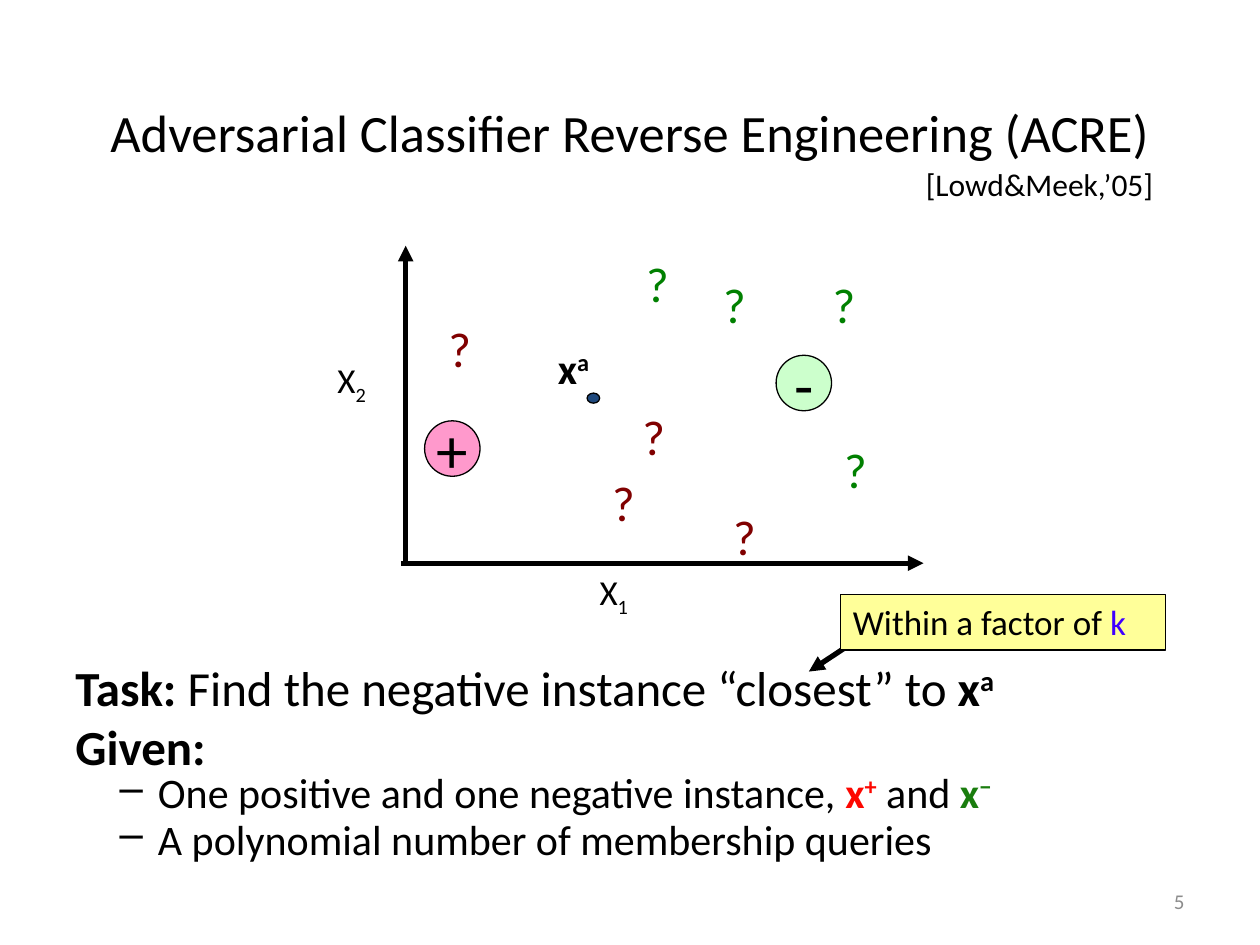
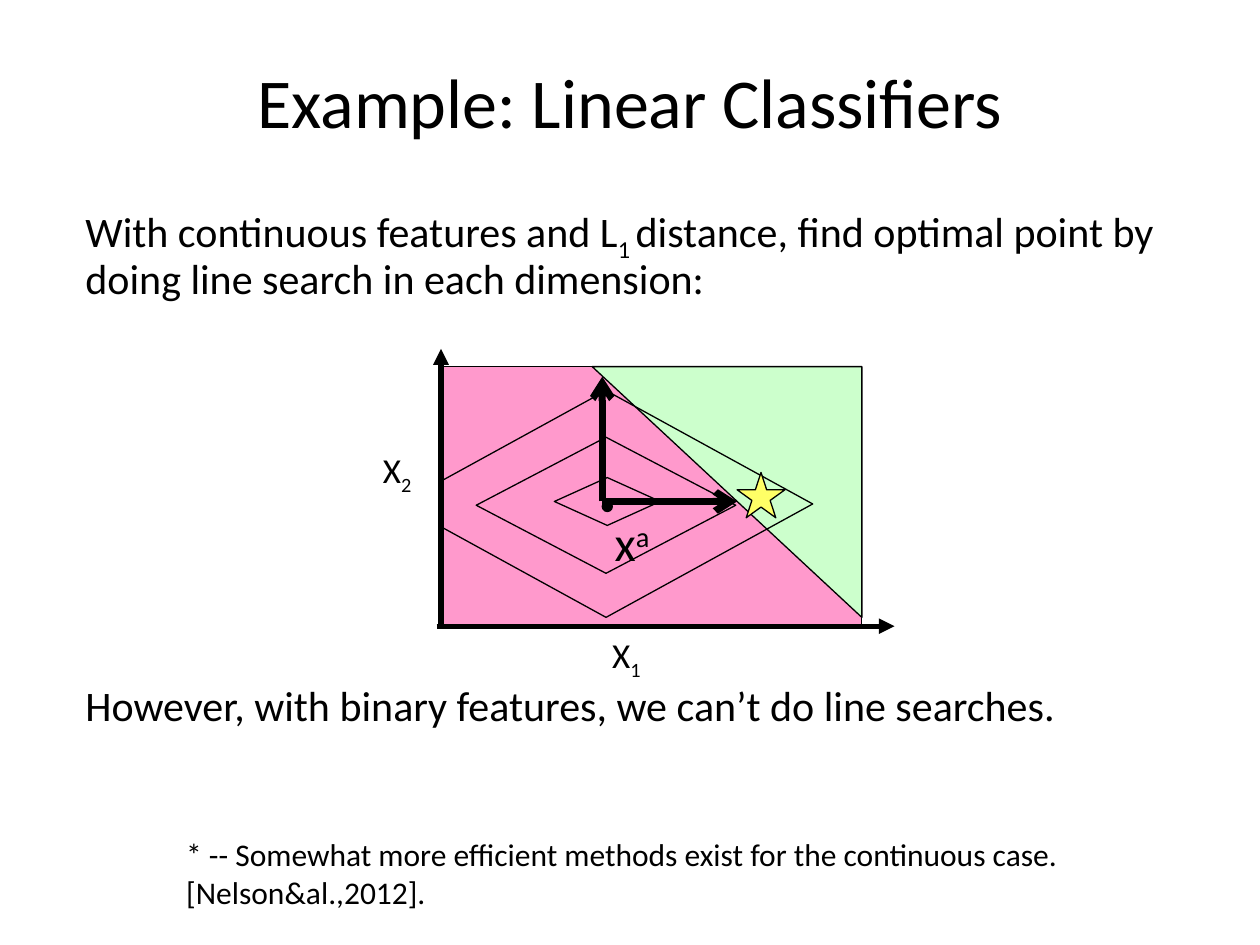
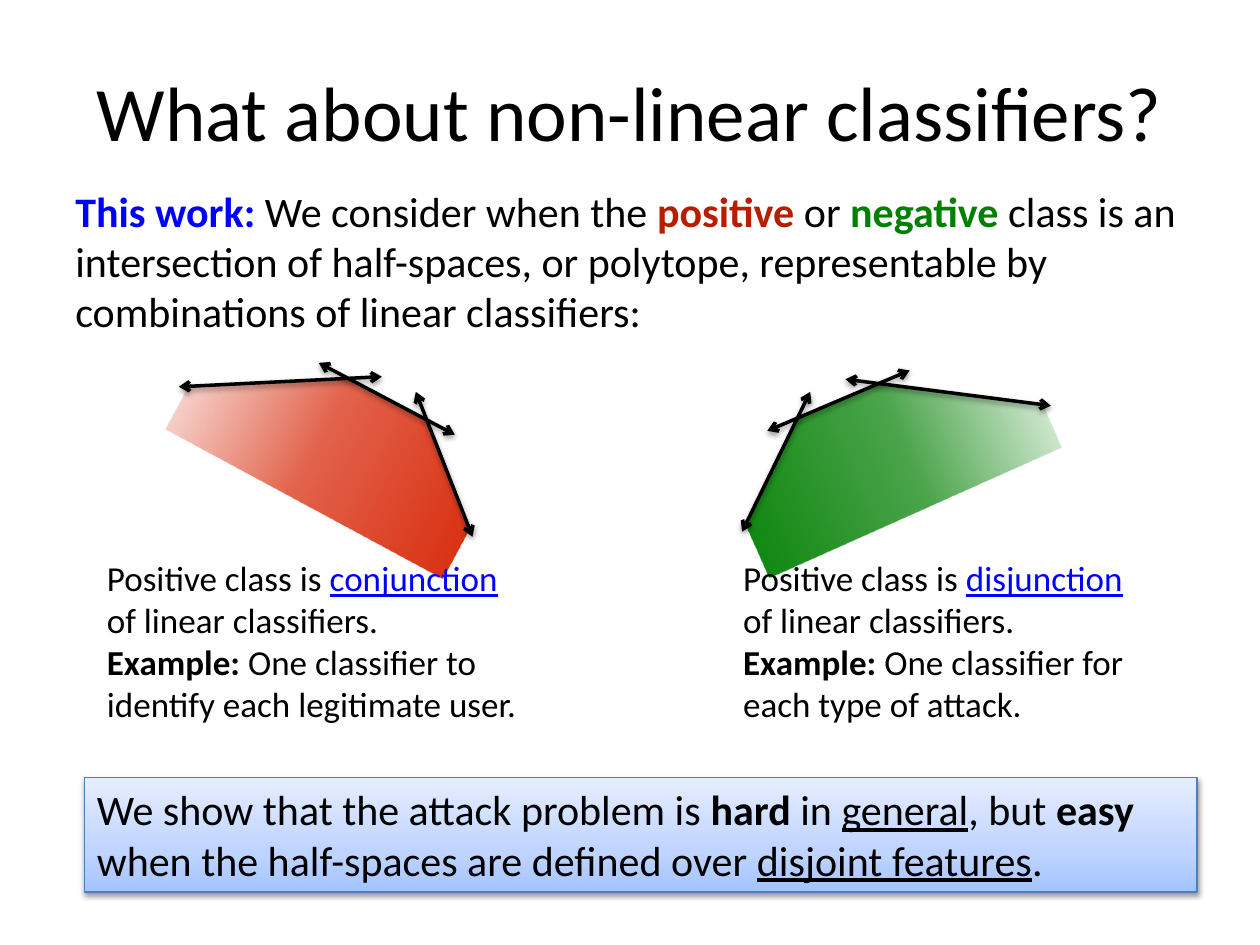
from lxml.etree import SubElement
from pptx import Presentation
from pptx.dml.color import RGBColor
from pptx.enum.shapes import MSO_CONNECTOR, MSO_SHAPE as Shape
from pptx.enum.text import MSO_ANCHOR as Anchor, PP_ALIGN as Align
from pptx.oxml.ns import qn
from pptx.util import Inches, Pt

# Shared style; the grid has 100 columns and 75 rows
COLUMNS, ROWS = 100, 75
FONT = "Calibri"
BLACK = RGBColor(0x00, 0x00, 0x00)
WHITE = RGBColor(0xFF, 0xFF, 0xFF)
GREY = RGBColor(0x8C, 0x8C, 0x8C)
GREEN = RGBColor(0x00, 0x80, 0x00)
MAROON = RGBColor(0x80, 0x00, 0x00)
RED = RGBColor(0xD7, 0x23, 0x02)
BRICK = RGBColor(0xB7, 0x1D, 0x00)
BRIGHT_RED = RGBColor(0xFD, 0x07, 0x00)
LEAF = RGBColor(0x1A, 0x7D, 0x0E)
BLUE = RGBColor(0x00, 0x00, 0xFF)
VIOLET = RGBColor(0x3F, 0x00, 0xFF)
NAVY = RGBColor(0x1F, 0x49, 0x7D)
STEEL = RGBColor(0x4B, 0x7E, 0xBC)
PINK = RGBColor(0xFF, 0x99, 0xCC)
MINT = RGBColor(0xCC, 0xFF, 0xCC)
CREAM = RGBColor(0xFF, 0xFF, 0x99)
YELLOW = RGBColor(0xFF, 0xFF, 0x66)
SKY = [(0, RGBColor(0xA4, 0xC4, 0xFF), 100),
       (35, RGBColor(0xBF, 0xD4, 0xFF), 100),
       (100, RGBColor(0xE6, 0xEE, 0xFF), 100)]

BOLD = dict(bold=True)
UNDERLINE = dict(underline=True)
TERM = dict(underline=True, color=BLUE)
SUB = dict(baseline=-25)
SUPER = dict(baseline=30)


def write(frame, paragraphs, size=20, color=BLACK, align=Align.LEFT,
          anchor=Anchor.TOP, wrap=True, spacing=None, gap=0, bullet=None):
    """Each paragraph is a list of spans: a string or (string, format)."""
    frame.word_wrap = wrap
    frame.vertical_anchor = anchor
    for index, spans in enumerate(paragraphs):
        para = frame.paragraphs[0] if index == 0 else frame.add_paragraph()
        para.alignment = align
        if spacing:
            para.line_spacing = spacing
        if index and gap:
            para.space_before = Pt(gap)
        if bullet:
            properties = para._p.get_or_add_pPr()
            properties.set("marL", str(Inches(0.5)))
            properties.set("indent", str(Inches(-0.23)))
            SubElement(properties, qn("a:buChar"), char=bullet)
        for item in spans:
            if item == "\n":
                para.add_line_break()
                continue
            text, look = (item, {}) if isinstance(item, str) else item
            span = para.add_run()
            span.text = text
            font = span.font
            font.name, font.size = FONT, Pt(size)
            font.bold = look.get("bold", False)
            font.underline = look.get("underline", False)
            font.color.rgb = look.get("color", color)
            if "baseline" in look:
                span._r.get_or_add_rPr().set("baseline", str(look["baseline"] * 1000))


def add_color(parent, color, alpha):
    tone = SubElement(parent, qn("a:srgbClr"), val=str(color))
    if alpha < 100:
        SubElement(tone, qn("a:alpha"), val=str(alpha * 1000))


def set_effects(element, shadow):
    properties = element.spPr
    effects = properties.find(qn("a:effectLst"))
    if effects is None:
        effects = SubElement(properties, qn("a:effectLst"))
    if shadow:
        outer = SubElement(effects, qn("a:outerShdw"), blurRad="40000", dist="20000",
                           dir="5400000", rotWithShape="0")
        add_color(outer, BLACK, 38)


class Canvas:
    def __init__(self):
        self.deck = Presentation()
        self.deck.slide_width, self.deck.slide_height = Inches(10), Inches(7.5)
        self.page = None

    def x(self, columns):
        return round(self.deck.slide_width * columns / COLUMNS)

    def y(self, rows):
        return round(self.deck.slide_height * rows / ROWS)

    def area(self, left, top, width, height):
        return self.x(left), self.y(top), self.x(width), self.y(height)

    def new_page(self):
        self.page = self.deck.slides.add_slide(self.deck.slide_layouts[6])

    def text(self, area, *paragraphs, **look):
        box = self.page.shapes.add_textbox(*self.area(*area))
        write(box.text_frame, paragraphs, **look)

    def title(self, text, top, size):
        self.text((5, top, 90, 12.5), [text], size=size, align=Align.CENTER,
                  anchor=Anchor.MIDDLE)

    def shape(self, kind, area, fill=None, line=BLACK, turn=0, shadow=False,
              gradient=None, angle=0):
        shape = self.page.shapes.add_shape(kind, *self.area(*area))
        shape.shadow.inherit = False
        shape.rotation = turn
        if gradient:
            shape.fill.gradient()
            shape.fill.gradient_angle = angle
            stops = shape._element.spPr.find(qn("a:gradFill")).find(qn("a:gsLst"))
            stops.clear()
            for place, color, alpha in gradient:
                add_color(SubElement(stops, qn("a:gs"), pos=str(place * 1000)), color, alpha)
        elif fill is None:
            shape.fill.background()
        else:
            shape.fill.solid()
            shape.fill.fore_color.rgb = fill
        if line is None:
            shape.line.fill.background()
        else:
            shape.line.color.rgb = line
            shape.line.width = Pt(0.75)
        set_effects(shape._element, shadow)
        return shape

    def arrow(self, start, end, width=3, head=None, tail="triangle", shadow=False):
        line = self.page.shapes.add_connector(
            MSO_CONNECTOR.STRAIGHT, self.x(start[0]), self.y(start[1]),
            self.x(end[0]), self.y(end[1]))
        line.line.color.rgb = BLACK
        line.line.width = Pt(width)
        outline = line.line._get_or_add_ln()
        for tag, kind in (("a:headEnd", head), ("a:tailEnd", tail)):
            if kind:
                SubElement(outline, qn(tag), type=kind)
        set_effects(line._element, shadow)

    def axes(self, left, base, top, right, labels):
        self.arrow((left, base), (left, top))
        self.arrow((left - 0.35, base), (right, base))
        for number, (column, row) in enumerate(labels, 1):
            self.text((column, row, 4.9, 4.3), ["X", (str(number), SUB)], wrap=False)

    def polytope(self, area, turn, color, angle, masks, edges):
        fade = [(0, color, 100), (54, color, 70), (100, color, 0)]
        self.shape(Shape.RECTANGLE, area, line=None, turn=turn, gradient=fade, angle=angle)
        for mask, mask_turn in masks:
            self.shape(Shape.RECTANGLE, mask, WHITE, None, mask_turn)
        for start, end in edges:
            self.arrow(start, end, width=2, head="arrow", tail="arrow", shadow=True)


def acre_page(canvas):
    canvas.new_page()
    canvas.arrow((69.2, 50), (64.2, 53.3))
    canvas.text((71.7, 69.5, 23.3, 4), ["5"], size=12, color=GREY,
                align=Align.RIGHT, anchor=Anchor.MIDDLE)
    canvas.title("Adversarial Classifier Reverse Engineering (ACRE)", 4.2, 30)
    canvas.text((5, 51.7, 90, 17),
                [("Task:", BOLD), " Find the negative instance “closest” to ",
                 ("x", BOLD), ("a", BOLD | SUPER)],
                [("Given:", BOLD)], size=28)

    # Feature space with unknown points and two known instances
    canvas.axes(32.2, 44.7, 19.5, 73.3, [(46.6, 44.8), (25.8, 28)])
    queries = {GREEN: [(56.4, 21.3), (65.1, 21.3), (50.3, 19.6), (66, 34.4)],
               MAROON: [(57.2, 39.7), (47.6, 37), (50, 31.8), (34.6, 24.8)]}
    for color, places in queries.items():
        for column, row in places:
            canvas.text((column, row, 4.2, 5.7), ["?"], size=28, color=color, wrap=False)
    for sign, column, row, fill in (("-", 61.6, 28.2, MINT), ("+", 33.7, 33.4, PINK)):
        instance = canvas.shape(Shape.OVAL, (column, row, 4.4, 4.4), fill)
        write(instance.text_frame, [[sign]], size=36, align=Align.CENTER,
              anchor=Anchor.MIDDLE, wrap=False)

    # What is given
    givens = [[" One positive and one negative instance, ",
               ("x", dict(bold=True, color=BRIGHT_RED)),
               ("+", dict(bold=True, color=BRIGHT_RED, baseline=30)), " and ",
               ("x", dict(bold=True, color=LEAF)),
               ("−", dict(bold=True, color=LEAF, baseline=30))],
              [" A polynomial number of membership queries"]]
    for row, given in zip((60.8, 64.5), givens):
        canvas.text((5.8, row, 79.2, 4.7), given, size=24, spacing=0.9, bullet="–")

    # Callout, citation and attack point
    callout = canvas.shape(Shape.RECTANGLE, (66.7, 47.2, 25.8, 4.4), CREAM)
    write(callout.text_frame, [["Within a factor of ", ("k", dict(color=VIOLET))]])
    canvas.text((72.5, 12.6, 20.4, 4), ["[Lowd&Meek,’05]"], size=18, wrap=False)
    canvas.text((43.3, 26.7, 4.7, 5), [("x", BOLD), ("a", BOLD | SUPER)],
                size=24, wrap=False)
    canvas.shape(Shape.OVAL, (46.6, 31.2, 1, 0.8), NAVY)


def linear_page(canvas):
    canvas.new_page()
    canvas.title("Example: Linear Classifiers", 1.7, 40)
    canvas.text((5.8, 15.9, 90, 24.1),
                ["With continuous features and L", ("1 ", SUB),
                 "distance, find optimal point by doing line search in each dimension:"],
                ["However, with binary features, we can’t do line searches."],
                size=24, spacing=0.9, gap=218)

    # Class regions and the distance contours
    canvas.shape(Shape.RECTANGLE, (34.8, 29.1, 33.6, 20.6), PINK)
    canvas.shape(Shape.RIGHT_TRIANGLE, (47, 29.1, 21.4, 19.9), MINT, turn=180)
    canvas.shape(Shape.DIAMOND, (31.7, 31, 32.8, 18))
    canvas.shape(Shape.RECTANGLE, (26.4, 30.7, 8.4, 19.1), WHITE, None)
    canvas.axes(35, 49.7, 27.7, 71, [(47.6, 49.8), (29.4, 35.1)])
    for contour in ((44, 37.9, 8.4, 3.8), (37.8, 34.7, 20.6, 10.8)):
        canvas.shape(Shape.DIAMOND, contour)

    # Line searches from the attack point
    canvas.text((47.8, 40.2, 5, 5.7), ["x", ("a", SUPER)], size=28, wrap=False)
    canvas.shape(Shape.OVAL, (47.8, 39.8, 0.8, 0.8), BLACK)
    for end in ((47.8, 29.9), (58.5, 39.8)):
        canvas.arrow((47.8, 39.8), end, width=4, tail="arrow")
    canvas.shape(Shape.STAR_5_POINT, (58.5, 37.5, 3.8, 3.6), YELLOW)
    canvas.text((13.8, 65.8, 72.4, 7.1),
                ["* -- Somewhat more efficient methods exist for the continuous case."],
                ["[Nelson&al.,2012]."], size=18, wrap=False)


def polytope_page(canvas):
    canvas.new_page()
    canvas.polytope((57.6, 29.5, 25.4, 11.7), 336, GREEN, 0,
                    [((61.7, 26.2, 7.9, 5.8), 337.2), ((67.7, 24.2, 17.1, 7.1), 6.9),
                     ((52.5, 31.8, 13.7, 5.8), 295.5)],
                    [((83.4, 32.2), (67.1, 30.1)), ((72.2, 29.4), (60.9, 34.2)),
                     ((64.3, 31.1), (58.9, 42.2))])
    canvas.polytope((14.4, 29, 25, 11.7), 28.3, RED, 180,
                    [((27.9, 26.1, 7.8, 5.8), 27.2), ((13.1, 23.3, 16.8, 7.1), 357.4),
                     ((30.7, 32.3, 13.7, 5.7), 68.8)],
                    [((14.2, 30.7), (30.3, 29.9)), ((25.3, 28.8), (36.1, 34.5)),
                     ((33, 31.1), (37.5, 42.6))])
    canvas.text((5, 14.2, 90, 55.8),
                [("This work:", dict(bold=True, color=BLUE)), " We consider when the ",
                 ("positive ", dict(bold=True, color=BRICK)), "or ",
                 ("negative ", dict(bold=True, color=GREEN)),
                 "class is an intersection of half-spaces, or polytope, "
                 "representable by combinations of linear classifiers:"], size=24)
    canvas.title("What about non-linear classifiers?", 2.5, 44)

    # The two cases
    cases = [(7.5, 37.5, "conjunction", [" One classifier to identify each legitimate user."]),
             (58, 35.3, "disjunction", [" One classifier for", "\n", "each type of attack."])]
    for column, width, term, example in cases:
        canvas.text((column, 43.7, width, 14.5),
                    ["Positive class is ", (term, TERM), "\n", "of linear classifiers."],
                    [("Example:", BOLD), *example])

    # Conclusion
    panel = canvas.shape(Shape.RECTANGLE, (6.7, 61.7, 88.3, 9.1), line=STEEL, shadow=True,
                         gradient=SKY, angle=90)
    write(panel.text_frame,
          [["We show that the attack problem is ", ("hard", BOLD), " in ",
            ("general", UNDERLINE), ", but ", ("easy", BOLD),
            " when the half-spaces are defined over ",
            ("disjoint features", UNDERLINE), "."]], size=24)


def main():
    canvas = Canvas()
    acre_page(canvas)
    linear_page(canvas)
    polytope_page(canvas)
    canvas.deck.save("out.pptx")


if __name__ == "__main__":
    main()
